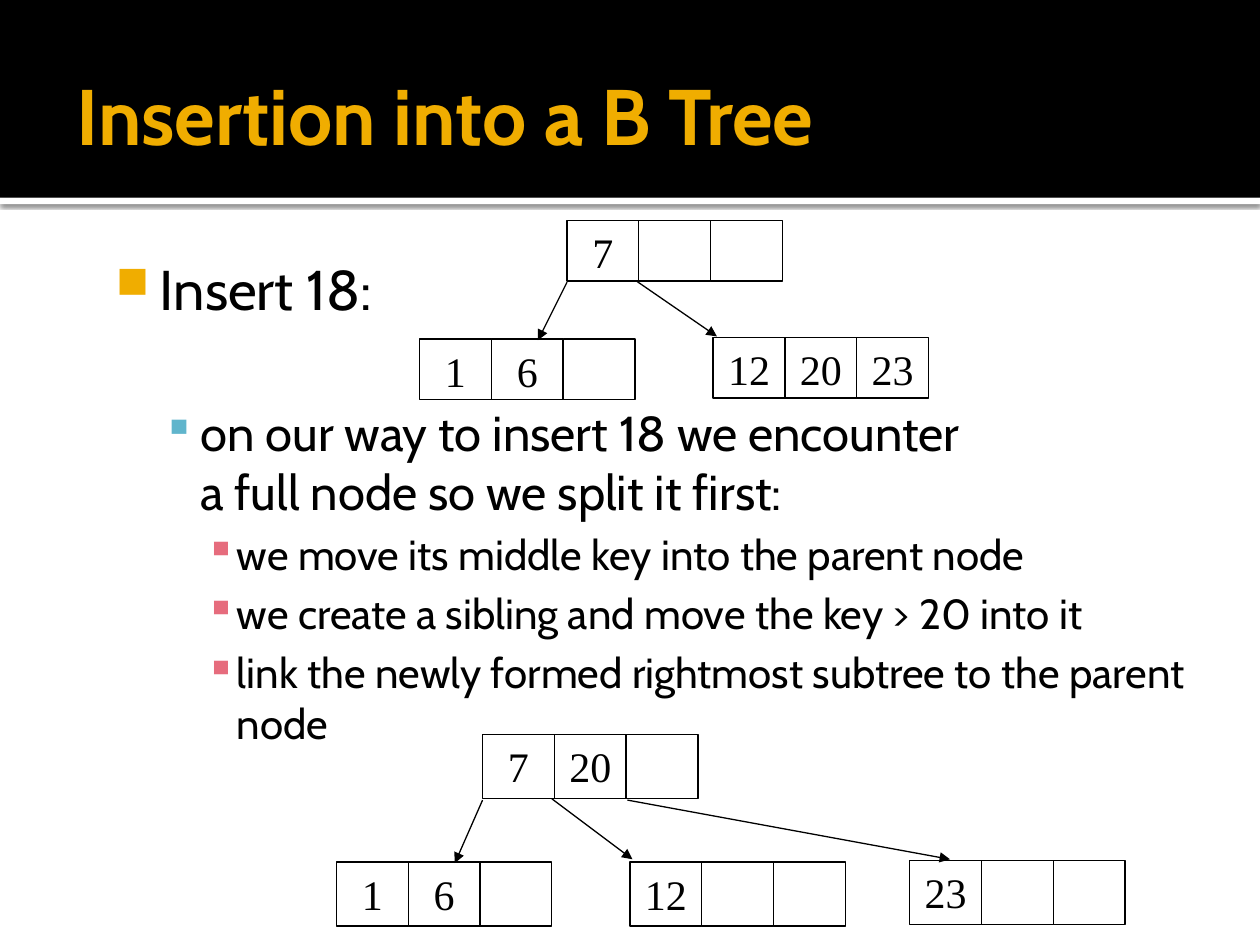
"""Build the slide on inserting a key into a B tree."""
from lxml import etree
from pptx import Presentation
from pptx.dml.color import RGBColor
from pptx.enum import shapes, text
from pptx.oxml import ns
from pptx.util import Inches, Pt

BLACK = RGBColor(0, 0, 0)
WHITE = RGBColor(255, 255, 255)
GOLD = RGBColor(0xF0, 0xAD, 0x00)
SANS, SERIF = "Cabin", "Times New Roman"
CELL = 0.57

TITLE = "Insertion into a B Tree"
BODY = [
    (0, 0, "Insert 18:"),
    (1, 46, "on our way to insert 18 we encounter\va full node so we split it first:"),
    (2, 5, "we move its middle key into the parent node"),
    (2, 5, "we create a sibling and move the key > 20 into it"),
    (2, 5, "link the newly formed rightmost subtree to the parent node"),
]
LEVELS = [
    (32, 0.48, -0.35, "■", "F0AD00", 80),
    (28, 0.8, -0.3, "▪", "60B5CC", 90),
    (24, 1.09, -0.25, "▪", "E66C7D", 100),
]
AFTER = {
    "high": 0.51,
    "nodes": [
        (7.22, 6.83, ["23", "", ""]),
        (3.83, 5.83, ["7", "20", ""]),
        (2.67, 6.84, ["1", "6", ""]),
        (5, 6.84, ["12", "", ""]),
    ],
    "links": [
        (3.83, 6.35, 3.61, 6.85),
        (4.38, 6.34, 5.02, 6.82),
        (4.98, 6.35, 7.54, 6.82),
    ],
}
BEFORE = {
    "high": 0.48,
    "nodes": [
        (4.5, 1.75, ["7", "", ""]),
        (3.33, 2.69, ["1", "6", ""]),
        (5.66, 2.68, ["12", "20", "23"]),
    ],
    "links": [(4.5, 2.24, 4.27, 2.7), (5.05, 2.23, 5.69, 2.67)],
}


def add_tag(parent, name, **attrs):
    return etree.SubElement(parent, ns.qn(name), attrs)


def style(para, size, face, color, bold=False):
    font = para.font
    font.size, font.name, font.bold = Pt(size), face, bold
    font.color.rgb = color


def add_rect(home, box, fill=None):
    rect = home.add_shape(shapes.MSO_SHAPE.RECTANGLE, *map(Inches, box))
    rect.shadow.inherit = False
    if fill is None:
        rect.fill.background()
        rect.line.color.rgb, rect.line.width = BLACK, Pt(0.75)
    else:
        rect.fill.solid()
        rect.fill.fore_color.rgb = fill
        rect.line.fill.background()
    return rect


def add_box(home, box, pads):
    frame = home.add_textbox(*map(Inches, box)).text_frame
    frame.word_wrap = True
    (frame.margin_left, frame.margin_top,
     frame.margin_right, frame.margin_bottom) = map(Inches, pads)
    return frame


def add_band(home):
    strip = add_rect(home, (0, 1.57, 10, 0.05), WHITE)
    effects = strip._element.spPr.find(ns.qn("a:effectLst"))
    shade = add_tag(effects, "a:outerShdw", blurRad=str(Pt(2.5)),
                    dist=str(Pt(0.8)), dir="5400000", algn="t")
    color = add_tag(shade, "a:srgbClr", val=str(BLACK))
    add_tag(color, "a:alpha", val="60000")
    add_rect(home, (0, 0, 10, 1.57), BLACK)


def add_title(home):
    frame = add_box(home, (0.51, 0.28, 8.97, 1.25), (0.1, 0.05, 0.05, 0.05))
    frame.vertical_anchor = text.MSO_ANCHOR.MIDDLE
    para = frame.paragraphs[0]
    para.text = TITLE
    style(para, 45, SANS, GOLD, True)


def add_body(home):
    frame = add_box(home, (0.73, 1.92, 9.01, 5.15), (0.06, 0.1, 0.1, 0.05))
    for i, (level, gap, words) in enumerate(BODY):
        size, left, hang, mark, color, scale = LEVELS[level]
        para = frame.add_paragraph() if i else frame.paragraphs[0]
        para.text, para.level, para.space_before = words, level, Pt(gap)
        props = para._p.get_or_add_pPr()
        props.set("marL", str(Inches(left)))
        props.set("indent", str(Inches(hang)))
        add_tag(add_tag(props, "a:buClr"), "a:srgbClr", val=color)
        add_tag(props, "a:buSzPct", val=str(scale * 1000))
        add_tag(props, "a:buChar", char=mark)
        style(para, size, SANS, BLACK)


def add_link(home, ends):
    link = home.add_connector(shapes.MSO_CONNECTOR.STRAIGHT, *map(Inches, ends))
    link.line.color.rgb, link.line.width = BLACK, Pt(0.75)
    add_tag(link.line._get_or_add_ln(), "a:tailEnd", type="triangle")
    add_tag(link._element.spPr, "a:effectLst")


def add_tree(home, tree):
    group = home.add_group_shape().shapes
    for left, top, keys in tree["nodes"]:
        for i, key in enumerate(keys):
            rect = add_rect(group, (left + i * CELL, top, CELL, tree["high"]))
            if key:
                frame = rect.text_frame
                frame.vertical_anchor = text.MSO_ANCHOR.TOP
                para = frame.paragraphs[0]
                para.text, para.alignment = key, text.PP_ALIGN.CENTER
                style(para, 24, SERIF, BLACK)
    for ends in tree["links"]:
        add_link(group, ends)


def main():
    deck = Presentation()
    deck.slide_width, deck.slide_height = Inches(10), Inches(7.5)
    home = deck.slides.add_slide(deck.slide_layouts[6]).shapes
    add_band(home)
    add_body(home)
    add_tree(home, AFTER)
    add_title(home)
    add_tree(home, BEFORE)
    deck.save("out.pptx")


if __name__ == "__main__":
    main()
